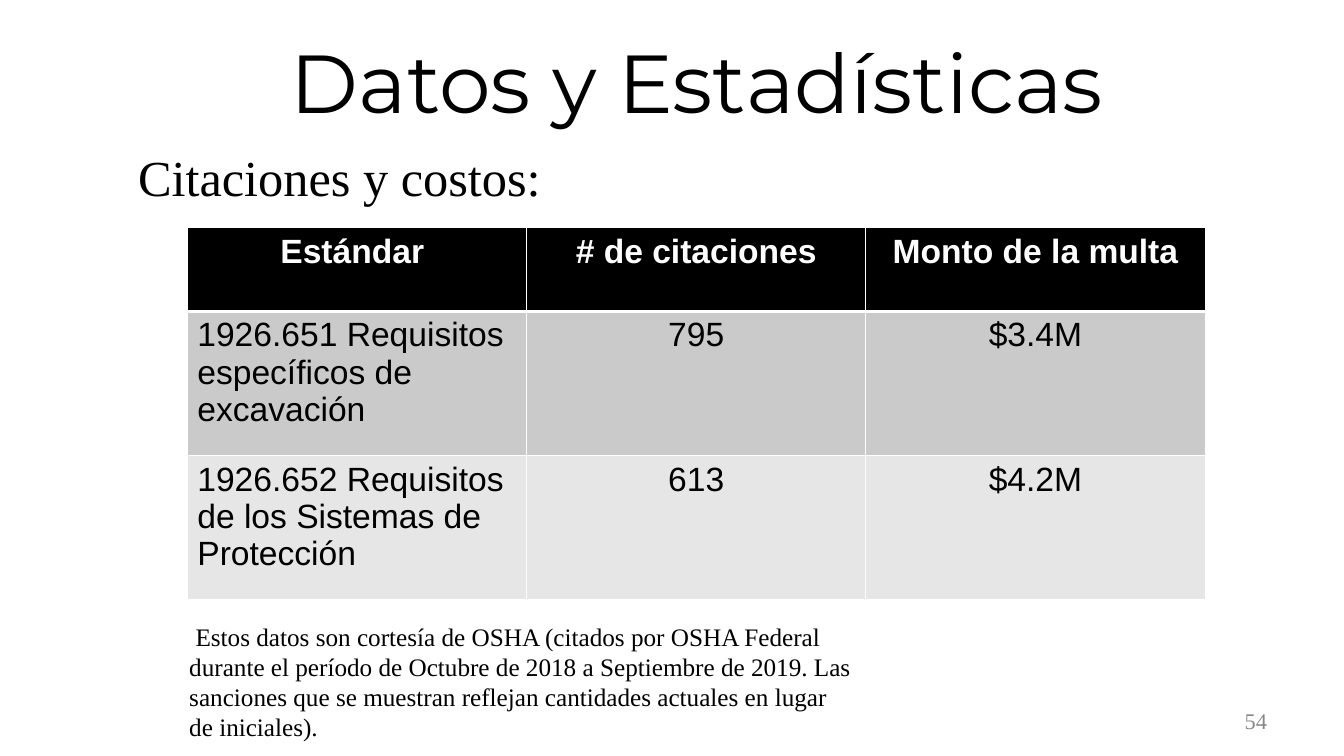
from dataclasses import dataclass

from lxml.etree import SubElement
from pptx import Presentation
from pptx.dml.color import RGBColor
from pptx.enum.text import MSO_ANCHOR, PP_ALIGN
from pptx.oxml.ns import qn
from pptx.slide import Slide
from pptx.table import _Cell
from pptx.util import Cm, Pt


@dataclass(frozen=True)
class Theme:
    black: str = "000000"
    white: str = "FFFFFF"
    page_grey: str = "888888"
    row_fills: tuple[str, ...] = ("000000", "CACACA", "E6E6E6")
    serif: str = "Times New Roman"
    sans: str = "Arial"
    display: str = "Montserrat"
    title_size: float = 58.7
    subtitle_size: float = 36
    table_size: float = 24
    note_size: float = 18
    page_size: float = 16
    border: float = 1
    header_border: float = 3


THEME = Theme()


@dataclass(frozen=True)
class TextBlock:
    text: str
    left: float
    top: float
    width: float
    height: float
    size: float
    font: str = THEME.serif
    color: str = THEME.black
    align: PP_ALIGN = PP_ALIGN.LEFT
    anchor: MSO_ANCHOR = MSO_ANCHOR.TOP


@dataclass(frozen=True)
class CitationTable:
    rows: tuple[tuple[str, ...], ...]
    left: float
    top: float
    column_width: float
    row_heights: tuple[float, ...]


TEXT_BLOCKS = (
    TextBlock("54", 24.28, 17.65, 7.9, 1.02, THEME.page_size,
              color=THEME.page_grey, align=PP_ALIGN.RIGHT,
              anchor=MSO_ANCHOR.MIDDLE),
    TextBlock(" Estos datos son cortesía de OSHA (citados por OSHA Federal "
              "durante el período de Octubre de 2018 a Septiembre de 2019. "
              "Las sanciones que se muestran reflejan cantidades actuales "
              "en lugar de iniciales).",
              4.52, 15.52, 17.25, 3.35, THEME.note_size),
    TextBlock("Citaciones y costos:", 3.23, 3.56, 17.25, 1.78,
              THEME.subtitle_size),
    TextBlock("Datos y Estadísticas ", 3.23, 0.2, 29.21, 3.68,
              THEME.title_size, font=THEME.display, align=PP_ALIGN.CENTER,
              anchor=MSO_ANCHOR.MIDDLE),
)

CITATIONS = CitationTable(
    rows=(
        ("Estándar ", "# de citaciones", "Monto de la multa"),
        ("1926.651 Requisitos específicos de excavación", "795", "$3.4M"),
        ("1926.652 Requisitos de los Sistemas de Protección", "613", "$4.2M"),
    ),
    left=4.72, top=5.74, column_width=8.55, row_heights=(2.11, 3.63, 3.63),
)


def draw_text(slide: Slide, block: TextBlock) -> None:
    box = slide.shapes.add_textbox(Cm(block.left), Cm(block.top),
                                   Cm(block.width), Cm(block.height))
    frame = box.text_frame
    frame.word_wrap = True
    frame.vertical_anchor = block.anchor
    paragraph = frame.paragraphs[0]
    paragraph.text = block.text
    paragraph.alignment = block.align
    paragraph.font.size = Pt(block.size)
    paragraph.font.name = block.font
    paragraph.font.color.rgb = RGBColor.from_string(block.color)


def add_borders(cell: _Cell, top: float, bottom: float) -> None:
    properties = cell._tc.get_or_add_tcPr()
    widths = {"a:lnL": THEME.border, "a:lnR": THEME.border,
              "a:lnT": top, "a:lnB": bottom}
    for side, width in widths.items():
        line = SubElement(properties, qn(side), w=str(Pt(width)))
        fill = SubElement(line, qn("a:solidFill"))
        SubElement(fill, qn("a:srgbClr"), val=THEME.white)


def draw_cell(cell: _Cell, text: str, row: int, column: int) -> None:
    is_header = row == 0
    add_borders(cell,
                THEME.header_border if row == 1 else THEME.border,
                THEME.header_border if is_header else THEME.border)
    cell.fill.solid()
    cell.fill.fore_color.rgb = RGBColor.from_string(THEME.row_fills[row])
    paragraph = cell.text_frame.paragraphs[0]
    paragraph.text = text
    centered = is_header or column > 0
    paragraph.alignment = PP_ALIGN.CENTER if centered else PP_ALIGN.LEFT
    paragraph.font.size = Pt(THEME.table_size)
    paragraph.font.name = THEME.sans
    paragraph.font.bold = is_header
    paragraph.font.color.rgb = RGBColor.from_string(
        THEME.white if is_header else THEME.black)


def draw_table(slide: Slide, citations: CitationTable) -> None:
    column_count = len(citations.rows[0])
    table = slide.shapes.add_table(
        len(citations.rows), column_count,
        Cm(citations.left), Cm(citations.top),
        Cm(citations.column_width * column_count),
        Cm(sum(citations.row_heights))).table
    for column in table.columns:
        column.width = Cm(citations.column_width)
    for row, (texts, height) in enumerate(
            zip(citations.rows, citations.row_heights)):
        table.rows[row].height = Cm(height)
        for column, text in enumerate(texts):
            draw_cell(table.cell(row, column), text, row, column)


def main() -> None:
    presentation = Presentation()
    presentation.slide_width = Cm(33.87)
    presentation.slide_height = Cm(19.05)
    slide = presentation.slides.add_slide(presentation.slide_layouts[6])
    page_number, note, subtitle, title = TEXT_BLOCKS
    draw_text(slide, page_number)
    draw_text(slide, note)
    draw_table(slide, CITATIONS)
    draw_text(slide, subtitle)
    draw_text(slide, title)
    presentation.save("out.pptx")


if __name__ == "__main__":
    main()
